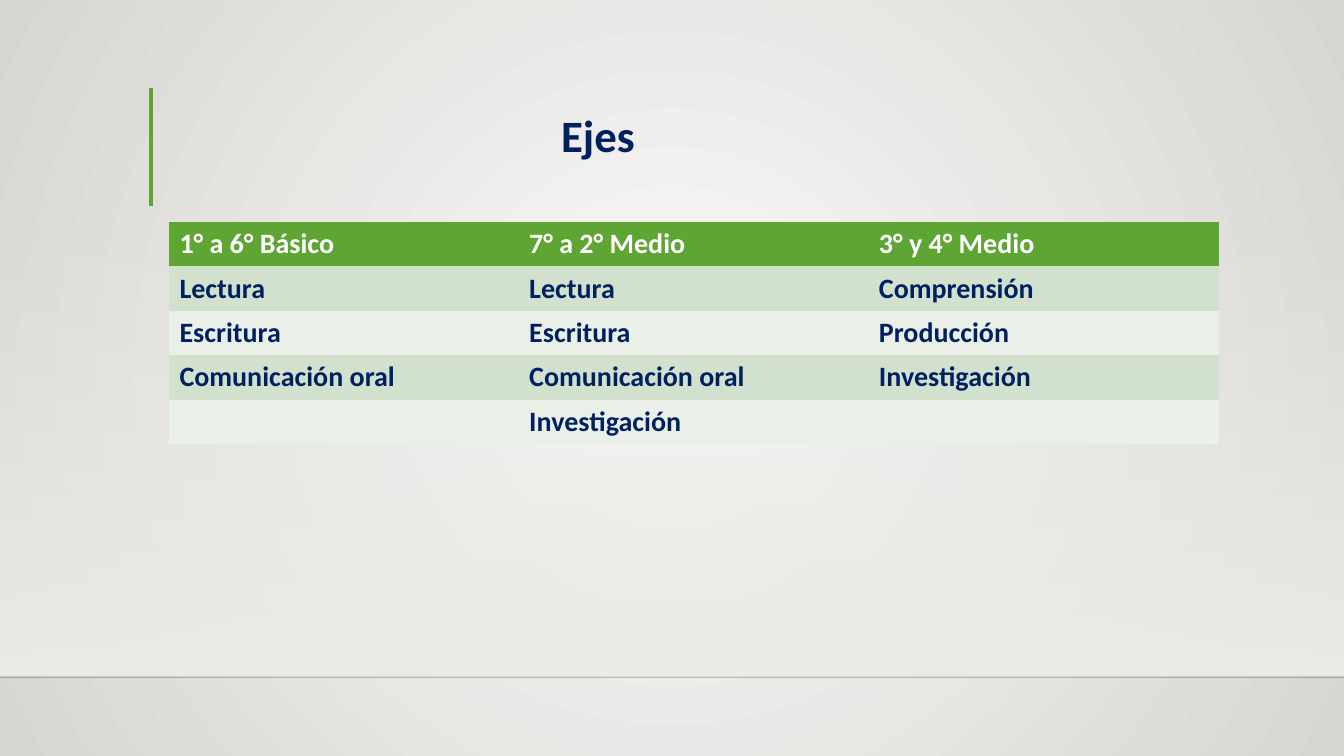
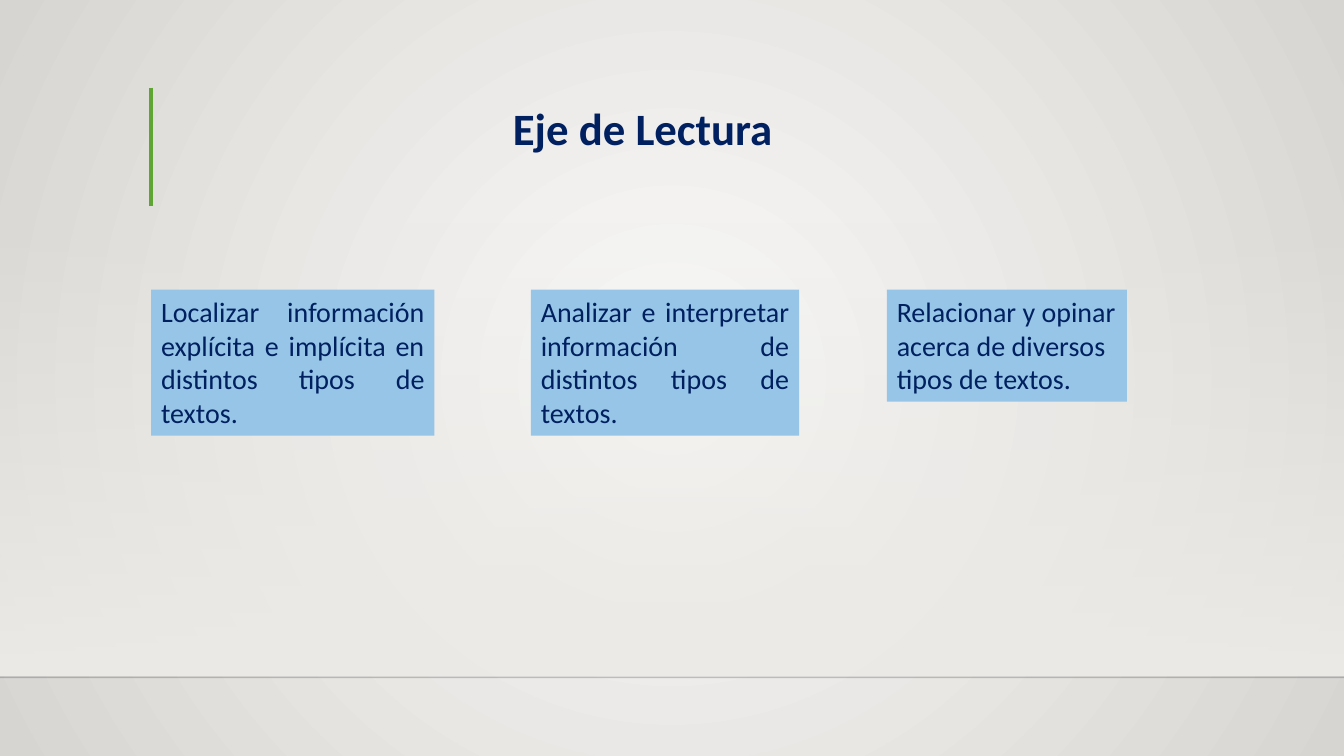
from lxml.etree import SubElement
from pptx import Presentation
from pptx.dml.color import RGBColor
from pptx.enum.shapes import MSO_CONNECTOR as Connector, MSO_SHAPE as Shape
from pptx.enum.text import MSO_ANCHOR as Anchor, MSO_AUTO_SIZE as AutoSize, PP_ALIGN as Align
from pptx.oxml.ns import qn
from pptx.util import Cm, Pt

FONT = "Calibri"
NAVY, WHITE, GREEN, BLUE = "002060", "FFFFFF", "5FA534", "96C5E7"
BAND_ROWS = ("D2E1CE", "EAF0E8")
SLIDE_WIDTH, SLIDE_HEIGHT = 33.87, 19.05
TITLE_WIDTH, TITLE_HEIGHT = 16, 1.63
ROW_HEIGHT = 1.12
NO_TABLE_STYLE = "{2D5ABB26-0587-4C30-8999-92F81FD0307C}"

AXES = [
    ("1° a 6° Básico", "7° a 2° Medio", "3° y 4° Medio"),
    ("Lectura", "Lectura", "Comprensión"),
    ("Escritura", "Escritura", "Producción"),
    ("Comunicación oral", "Comunicación oral", "Investigación"),
    ("", "Investigación", ""),
]
SKILLS = [
    (3.81, 7.14, 3.68, Align.JUSTIFY,
     "Localizar información explícita e implícita en distintos tipos de textos."),
    (13.38, 6.76, 3.68, Align.JUSTIFY,
     "Analizar e interpretar información de distintos tipos de textos."),
    (22.35, 6.05, 2.82, Align.LEFT,
     "Relacionar y opinar acerca de diversos tipos de textos."),
]


def color(value):
    return RGBColor.from_string(value)


def set_solid(fill, value):
    fill.solid()
    fill.fore_color.rgb = color(value)


def set_gradient(fill, start, end):
    fill.gradient()
    for stop, value in zip(fill.gradient_stops, (start, end)):
        stop.color.rgb = color(value)


def set_alpha(element, percent):
    first = next(element.iter(qn("a:srgbClr")))
    SubElement(first, qn("a:alpha")).set("val", str(percent * 1000))


def write(frame, text, size, value, bold=False, align=Align.LEFT):
    para = frame.paragraphs[0]
    para.alignment = align
    span = para.add_run()
    span.text = text
    span.font.name = FONT
    span.font.size = Pt(size)
    span.font.bold = bold
    span.font.color.rgb = color(value)


def paint_background(master):
    set_gradient(master.background.fill, "FAFAF9", "D7D5D2")
    gradient = next(master.background._cSld.iter(qn("a:gradFill")))
    gradient.remove(gradient.find(qn("a:lin")))
    circle = SubElement(gradient, qn("a:path"))
    circle.set("path", "circle")
    center = SubElement(circle, qn("a:fillToRect"))
    for side in "ltrb":
        center.set(side, "50000")


def add_line(page, start, end, value, width):
    line = page.shapes.add_connector(Connector.STRAIGHT, *map(Cm, start + end))
    line.line.color.rgb = color(value)
    line.line.width = Pt(width)
    SubElement(line._element.spPr, qn("a:effectLst"))
    return line


def add_band(page):
    band = page.shapes.add_shape(Shape.RECTANGLE, 0, Cm(5.59), Cm(SLIDE_WIDTH), Cm(11.43))
    band.shadow.inherit = False
    band.line.fill.background()
    set_gradient(band.fill, "EDEBE7", "EDEBE7")
    band.fill.gradient_angle = 270
    set_alpha(band._element.spPr, 0)
    return band


def decorate(layout, page):
    band = add_band(page)
    floor = add_line(page, (0, 17.07), (SLIDE_WIDTH, 17.07), "000001", 1)
    set_alpha(floor._element.spPr, 20)
    accent = add_line(page, (3.81, 2.21), (3.81, 5.18), GREEN, 3)
    for number, shape in enumerate((band, floor, accent), 100):
        shape._element.xpath(".//p:cNvPr")[0].set("id", str(number))
        layout.shapes._spTree.append(shape._element)


def add_title(page, text, center, top):
    title = page.shapes.title
    title.left, title.top = Cm(center - TITLE_WIDTH / 2), Cm(top)
    title.width, title.height = Cm(TITLE_WIDTH), Cm(TITLE_HEIGHT)
    frame = title.text_frame
    frame.auto_size = AutoSize.NONE
    frame.vertical_anchor = Anchor.BOTTOM
    write(frame, text, 32, NAVY, True, Align.CENTER)


def add_axes_table(page, rows):
    table = page.shapes.add_table(
        len(rows), len(rows[0]), Cm(4.27), Cm(5.59), Cm(26.44), Cm(ROW_HEIGHT * len(rows))
    ).table
    next(table._tbl.iter(qn("a:tableStyleId"))).text = NO_TABLE_STYLE
    for index, texts in enumerate(rows):
        fill, ink = (BAND_ROWS[(index - 1) % 2], NAVY) if index else (GREEN, WHITE)
        for cell, text in zip(table.rows[index].cells, texts):
            set_solid(cell.fill, fill)
            if text:
                write(cell.text_frame, text, 20, ink, True)


def add_skill(page, left, width, height, align, text):
    box = page.shapes.add_textbox(Cm(left), Cm(7.3), Cm(width), Cm(height))
    set_solid(box.fill, BLUE)
    box.text_frame.word_wrap = True
    write(box.text_frame, text, 20, NAVY, align=align)


def main():
    deck = Presentation()
    deck.slide_width, deck.slide_height = Cm(SLIDE_WIDTH), Cm(SLIDE_HEIGHT)
    layout = deck.slide_layouts.get_by_name("Title Only")
    paint_background(deck.slide_master)

    axes = deck.slides.add_slide(layout)
    decorate(layout, axes)
    add_title(axes, "Ejes", 15.07, 2.57)
    add_axes_table(axes, AXES)

    reading = deck.slides.add_slide(layout)
    add_title(reading, "Eje de Lectura", 16.2, 2.39)
    for skill in SKILLS:
        add_skill(reading, *skill)

    deck.save("out.pptx")


if __name__ == "__main__":
    main()
